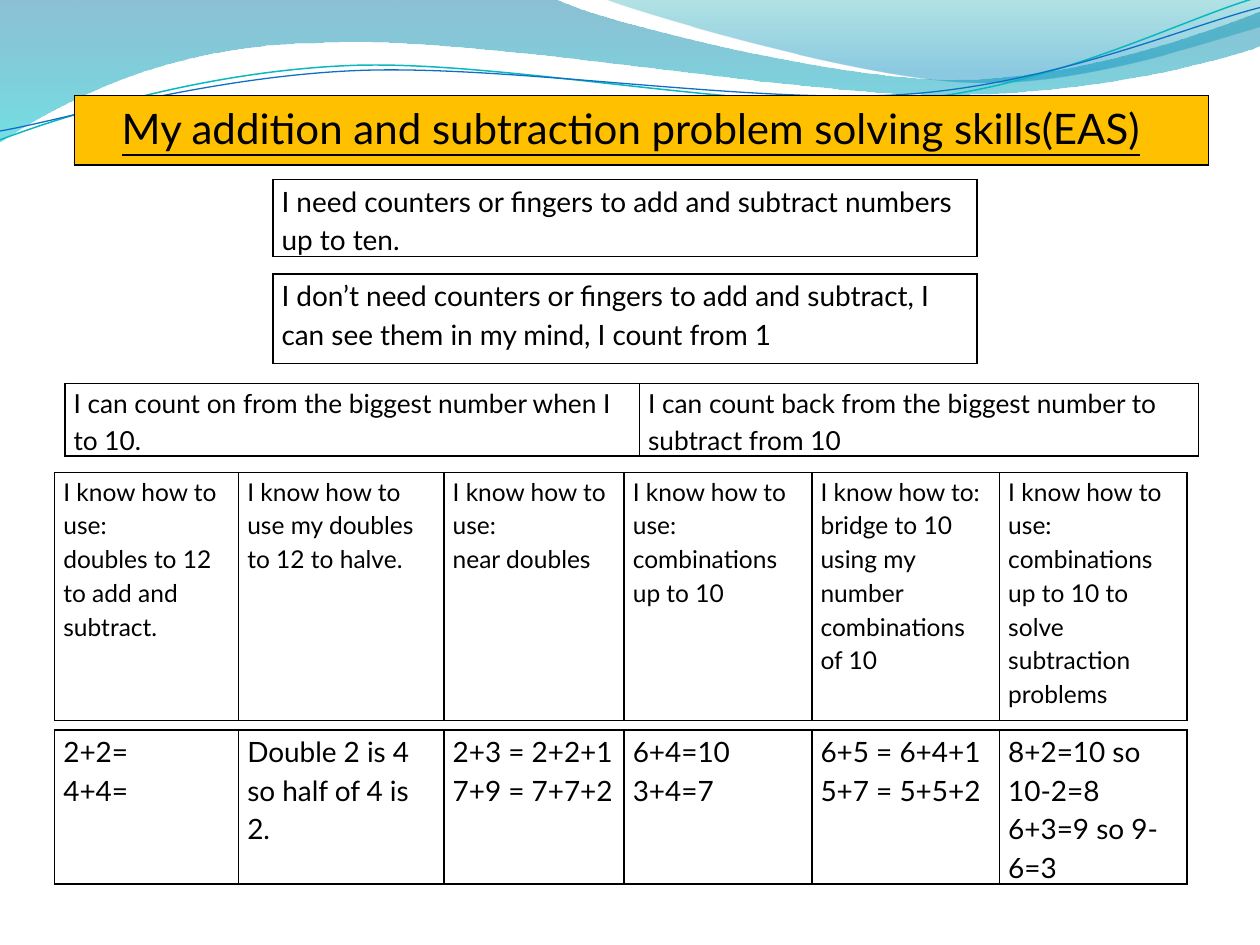
"""Build a slide of addition and subtraction skills as stacked tables under waves."""
from dataclasses import dataclass
from math import cos, radians, sin

from lxml import etree
from pptx import Presentation
from pptx.dml.color import RGBColor
from pptx.enum.text import PP_ALIGN
from pptx.oxml.ns import qn
from pptx.util import Emu, Inches, Pt

LEFT, CENTER = PP_ALIGN.LEFT, PP_ALIGN.CENTER
SLIDE_WIDTH, SLIDE_HEIGHT = Inches(10), Inches(7.5)
GRID_COLUMNS = 100
UNIT = SLIDE_WIDTH / GRID_COLUMNS
BLANK_LAYOUT = 6

Point = tuple[float, float]


@dataclass(frozen=True)
class Theme:
    font: str = "Lato"
    ink: str = "000000"
    banner: str = "FFC000"
    teal_line: str = "0AB8BF"
    blue_line: str = "0F6FC6"
    title_size: int = 24
    step_size: int = 16
    count_size: int = 15
    strategy_size: int = 14
    example_size: int = 16
    spacing: float = 1.15
    border: float = 1


THEME = Theme()


@dataclass(frozen=True)
class GradientStop:
    position: float
    color: str
    alpha: int


@dataclass(frozen=True)
class Wave:
    """A path of line (one-point) and Bézier (three-point) segments in grid units."""
    start: Point
    segments: list[tuple[Point, ...]]
    stops: tuple[GradientStop, ...] = ()
    line_color: str = ""
    line_width: float = 0
    tilt: float = 0
    pivot: Point = (0, 0)


@dataclass(frozen=True)
class SkillRow:
    """A one-row table placed in grid units."""
    left: float
    top: float
    height: float
    columns: list[float]
    texts: list[str]
    size: int
    fill: str = ""
    align: PP_ALIGN = LEFT
    underline: bool = False
    right_margin: float = 0.7


WAVES = [
    Wave((0, -0.1), [((44, -0.1),),
                     ((47.6, 1.7), (66.4, 6.3), (75.8, 6.3)),
                     ((85.3, 6.3), (95.8, 2.6), (100, 0.9)),
                     ((100.1, 3.6),),
                     ((98.3, 4.4), (87, 7.6), (74.6, 7.5)),
                     ((62.2, 7.5), (38.2, 2.8), (25.7, 3.4)),
                     ((12.9, 3.5), (4.6, 8.3), (-0.1, 11.3))],
         (GradientStop(0, "0074A1", 45), GradientStop(1, "00C6CF", 55))),
    Wave((47.9, -0.1), [((50.9, 1.1), (68.2, 6.2), (76.9, 6.5)),
                        ((85.6, 6.9), (96.1, 3.2), (100, 2.1)),
                        ((100, 0),)],
         (GradientStop(0, "00A1A9", 30), GradientStop(0.8, "008BBF", 45))),
    Wave((0, 11.1), [((4.8, 9.3), (15.8, 5.7), (27.7, 5.2)),
                     ((39.5, 4.7), (59.3, 8.9), (71.3, 8)),
                     ((83.3, 7.1), (93.8, 1.5), (99.8, -0.2))],
         line_color=THEME.teal_line, line_width=0.85, tilt=-2.7, pivot=(49.9, 5.75)),
    Wave((0, 10.4), [((4.7, 9.6), (16.4, 6.1), (28.3, 5.6)),
                     ((40.3, 5.1), (59.7, 8.3), (71.7, 7.5)),
                     ((83.6, 6.7), (94.1, 2.1), (100, 0.6))],
         line_color=THEME.blue_line, line_width=0.75, tilt=-2.7, pivot=(49.95, 5.9)),
]

STRATEGY_COLUMNS = [14.6, 16.3, 14.3, 14.9, 14.9, 14.9]

SKILL_ROWS = [
    SkillRow(5.9, 7.6, 5.5, [90],
             ["My addition and subtraction problem solving skills(EAS)"],
             THEME.title_size, fill=THEME.banner, align=CENTER, underline=True,
             right_margin=2.4),
    SkillRow(21.65, 14.25, 5.5, [55.9],
             ["I need counters or fingers to add and subtract numbers up to ten."],
             THEME.step_size),
    SkillRow(21.65, 21.75, 7.1, [55.9],
             ["I don’t need counters or fingers to add and subtract, "
              "I can see them in my mind, I count from 1"],
             THEME.step_size),
    SkillRow(5.14, 30.43, 5.5, [45.6, 44.4],
             ["I can count on from the biggest number when I to 10.",
              "I can count back from the biggest number to subtract from 10"],
             THEME.count_size),
    SkillRow(4.33, 37.5, 19.7, STRATEGY_COLUMNS,
             ["I know how to use:\ndoubles to 12 to add and subtract.",
              "I know how to use my doubles to 12 to halve.",
              "I know how to use:\nnear doubles",
              "I know how to use: combinations up to 10",
              "I know how to:\nbridge to 10 using my number combinations of 10",
              "I know how to use:\ncombinations up to 10 to solve subtraction problems"],
             THEME.strategy_size),
    SkillRow(4.33, 57.95, 12.1, STRATEGY_COLUMNS,
             ["2+2=\n4+4=",
              "Double 2 is 4 so half of 4 is 2.",
              "2+3 = 2+2+1\n7+9 = 7+7+2",
              "6+4=10\n3+4=7",
              "6+5 = 6+4+1\n5+7 = 5+5+2",
              "8+2=10 so 10-2=8\n6+3=9 so 9-6=3"],
             THEME.example_size),
]


def grid(units: float) -> Emu:
    return Emu(round(units * UNIT))


def level(wave: Wave, point: Point) -> tuple[Emu, Emu]:
    angle = radians(-wave.tilt)
    dx, dy = point[0] - wave.pivot[0], point[1] - wave.pivot[1]
    return (grid(wave.pivot[0] + dx * cos(angle) - dy * sin(angle)),
            grid(wave.pivot[1] + dx * sin(angle) + dy * cos(angle)))


def bend(ribbon, segments: list[tuple[Point, ...]]) -> None:
    straights = iter(list(ribbon._element.spPr.iter(qn("a:lnTo"))))
    for segment in segments:
        group = [next(straights) for _ in segment]
        if len(group) == 3:
            curve = etree.Element(qn("a:cubicBezTo"))
            group[0].addprevious(curve)
            for straight in group:
                curve.append(straight[0])
                straight.getparent().remove(straight)


def draw_wave(slide, wave: Wave) -> None:
    builder = slide.shapes.build_freeform(*level(wave, wave.start))
    builder.add_line_segments([level(wave, point) for segment in wave.segments
                               for point in segment], close=bool(wave.stops))
    ribbon = builder.convert_to_shape()
    bend(ribbon, wave.segments)
    ribbon.rotation = wave.tilt
    ribbon.shadow.inherit = False
    if not wave.stops:
        ribbon.fill.background()
        ribbon.line.color.rgb = RGBColor.from_string(wave.line_color)
        ribbon.line.width = Pt(wave.line_width)
        return
    ribbon.line.fill.background()
    ribbon.fill.gradient()
    ribbon.fill.gradient_angle = 270
    for target, stop in zip(ribbon.fill.gradient_stops, wave.stops):
        target.position = stop.position
        target.color.rgb = RGBColor.from_string(stop.color)
    for color, stop in zip(ribbon._element.spPr.iter(qn("a:srgbClr")), wave.stops):
        etree.SubElement(color, qn("a:alpha"), val=str(stop.alpha * 1000))


def write(frame, text: str, *, size: int, align: PP_ALIGN, underline: bool) -> None:
    frame.word_wrap = True
    for index, line in enumerate(text.split("\n")):
        paragraph = frame.add_paragraph() if index else frame.paragraphs[0]
        paragraph.alignment = align
        paragraph.line_spacing = THEME.spacing
        run = paragraph.add_run()
        run.text = line
        run.font.name, run.font.size = THEME.font, Pt(size)
        run.font.underline = underline
        run.font.color.rgb = RGBColor.from_string(THEME.ink)


def outline(cell) -> None:
    properties = cell._tc.get_or_add_tcPr()
    for index, side in enumerate(("a:lnL", "a:lnR", "a:lnT", "a:lnB")):
        border = etree.Element(qn(side), w=str(Pt(THEME.border)))
        solid = etree.SubElement(border, qn("a:solidFill"))
        etree.SubElement(solid, qn("a:srgbClr"), val=THEME.ink)
        properties.insert(index, border)


def draw_row(slide, row: SkillRow) -> None:
    table = slide.shapes.add_table(1, len(row.columns), grid(row.left), grid(row.top),
                                   grid(sum(row.columns)), grid(row.height)).table
    table.first_row = table.horz_banding = False
    for column, width, cell, text in zip(table.columns, row.columns,
                                         table.iter_cells(), row.texts):
        column.width = grid(width)
        cell.margin_left, cell.margin_right = grid(0.7), grid(row.right_margin)
        cell.margin_top = cell.margin_bottom = 0
        if row.fill:
            cell.fill.solid()
            cell.fill.fore_color.rgb = RGBColor.from_string(row.fill)
        else:
            cell.fill.background()
        outline(cell)
        write(cell.text_frame, text, size=row.size, align=row.align,
              underline=row.underline)


def main() -> None:
    deck = Presentation()
    deck.slide_width, deck.slide_height = SLIDE_WIDTH, SLIDE_HEIGHT
    slide = deck.slides.add_slide(deck.slide_layouts[BLANK_LAYOUT])
    for wave in WAVES:
        draw_wave(slide, wave)
    for row in SKILL_ROWS:
        draw_row(slide, row)
    deck.save("out.pptx")


if __name__ == "__main__":
    main()
